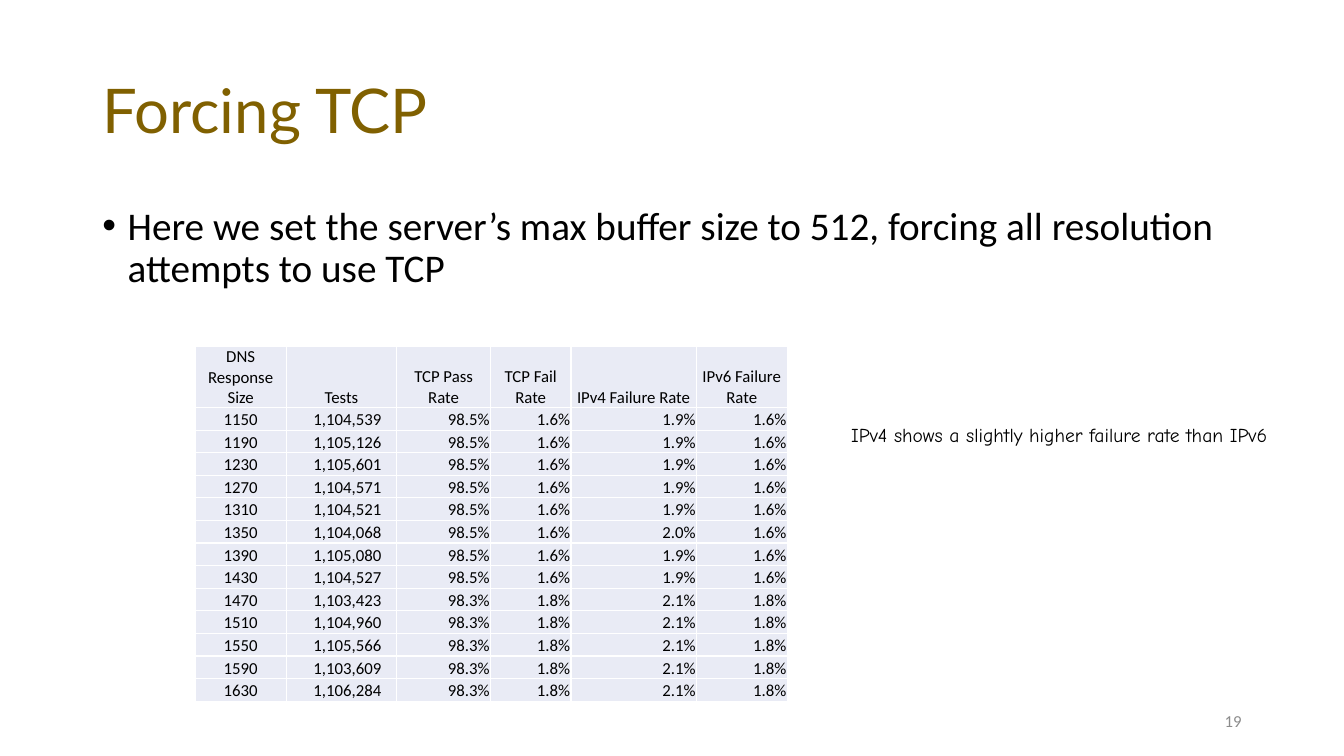
from lxml.etree import SubElement as Sub
from pptx import Presentation as Deck
from pptx.dml.color import RGBColor as Rgb
from pptx.enum.text import MSO_ANCHOR as Anchor, PP_ALIGN as Align
from pptx.oxml import parse_xml
from pptx.oxml.ns import nsdecls, qn
from pptx.util import Cm, Pt

HUES = {"title": "806000", "text": "000000", "page": "8C8C8C",
        "cell": "E9EBF5", "rule": "FFFFFF"}

# Table content
HEADS = ["DNS Response Size", "Tests", "TCP Pass Rate", "TCP Fail Rate",
         "IPv4 Failure Rate", "IPv6 Failure Rate"]
TESTS = ["1,104,539", "1,105,126", "1,105,601", "1,104,571", "1,104,521",
         "1,104,068", "1,105,080", "1,104,527", "1,103,423", "1,104,960",
         "1,105,566", "1,103,609", "1,106,284"]
LOW = ["98.5%", "1.6%", "1.9%", "1.6%"]
MID = ["98.5%", "1.6%", "2.0%", "1.6%"]
HIGH = ["98.3%", "1.8%", "2.1%", "1.8%"]
RATES = [LOW] * 5 + [MID] + [LOW] * 2 + [HIGH] * 5
WIDTHS = [2.29, 2.79, 2.36, 2.03, 3.16, 2.29]


def add_run(para, text, size, font, hue):
    run = para.add_run()
    run.text = text
    run.font.size = Pt(size)
    run.font.name = font
    run.font.color.rgb = Rgb.from_string(HUES[hue])


def add_text(slide, box, text, size, font, hue,
             anchor=Anchor.TOP, align=Align.LEFT):
    frame = slide.shapes.add_textbox(*map(Cm, box)).text_frame
    frame.word_wrap = True
    frame.vertical_anchor = anchor
    para = frame.paragraphs[0]
    para.alignment = align
    add_run(para, text, size, font, hue)
    return para


def add_bullet(para):
    para.space_before = Pt(10)
    props = para._p.get_or_add_pPr()
    props.set("marL", str(Cm(0.64)))
    props.set("indent", str(Cm(-0.64)))
    Sub(props, qn("a:buFont")).set("typeface", "Arial")
    Sub(props, qn("a:buChar")).set("char", "•")


def add_edges(cell):
    props = cell._tc.get_or_add_tcPr()
    for spot, side in enumerate("LRTB"):
        props.insert(spot, parse_xml(
            f'<a:ln{side} {nsdecls("a")} w="{Pt(1)}"><a:solidFill>'
            f'<a:srgbClr val="{HUES["rule"]}"/></a:solidFill></a:ln{side}>'))


def fill_cell(cell, text, align, left):
    cell.fill.solid()
    cell.fill.fore_color.rgb = Rgb.from_string(HUES["cell"])
    cell.vertical_anchor = Anchor.BOTTOM
    cell.margin_left = Cm(left)
    cell.margin_right = cell.margin_top = Cm(0.02)
    cell.margin_bottom = 0
    para = cell.text_frame.paragraphs[0]
    para.alignment = align
    add_run(para, text, 12, "Calibri", "text")
    add_edges(cell)


def add_grid(slide):
    rows = [HEADS]
    for i, (tests, rates) in enumerate(zip(TESTS, RATES)):
        rows.append([str(1150 + 40 * i), tests, *rates])
    grid = slide.shapes.add_table(
        len(rows), len(HEADS), Cm(4.92), Cm(8.72),
        Cm(sum(WIDTHS)), Cm(8.9)).table
    grid.first_row = grid.horz_banding = False
    for col, width in zip(grid.columns, WIDTHS):
        col.width = Cm(width)
    for r, row in enumerate(rows):
        grid.rows[r].height = Cm(0.57 if r else 1.55)
        for c, text in enumerate(row):
            align, left = Align.RIGHT, 0.02
            if r == 0 or c == 0:
                align = Align.CENTER
            elif c == 1:
                align, left = Align.LEFT, 0.69
            fill_cell(grid.cell(r, c), text, align, left)


def main():
    deck = Deck()
    deck.slide_width, deck.slide_height = Cm(33.87), Cm(19.05)
    slide = deck.slides.add_slide(deck.slide_layouts[6])

    # Title and body
    title = add_text(slide, (2.33, 1.01, 29.21, 3.68), "Forcing TCP",
                     44, "Lato", "title", Anchor.MIDDLE)
    body = add_text(slide, (2.33, 5.07, 29.21, 12.09),
                    "Here we set the server’s max buffer size to 512, "
                    "forcing all resolution attempts to use TCP",
                    28, "Calibri", "text")
    title.line_spacing = body.line_spacing = 0.9
    add_bullet(body)

    # Results
    add_grid(slide)
    add_text(slide, (21.2, 10.52, 11.1, 1.45),
             "IPv4 shows a slightly higher failure rate than IPv6",
             14, "Comic Neue", "text")

    # Page number
    add_text(slide, (23.92, 17.66, 7.62, 1.01), "19", 12, "Calibri", "page",
             Anchor.MIDDLE, Align.RIGHT)
    deck.save("out.pptx")


if __name__ == "__main__":
    main()
